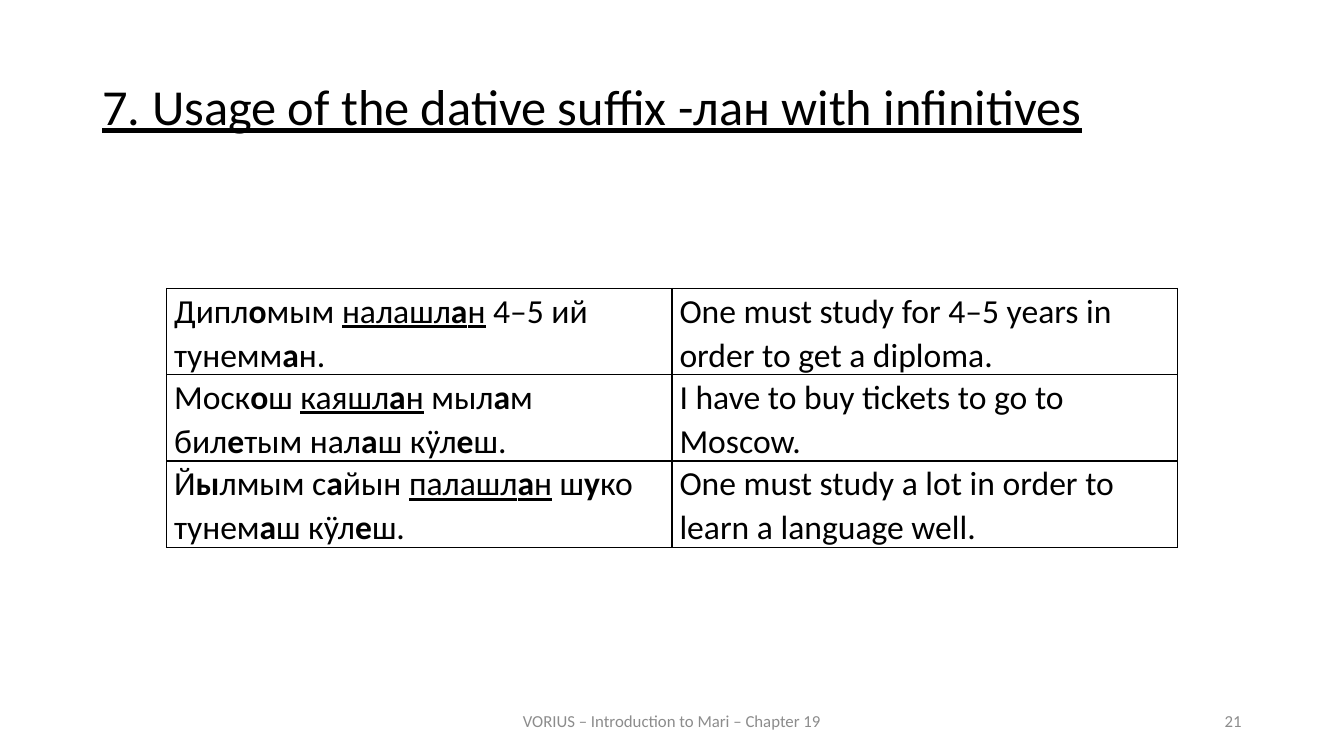
from lxml.etree import SubElement
from pptx import Presentation
from pptx.dml.color import RGBColor
from pptx.enum.text import MSO_ANCHOR, MSO_AUTO_SIZE, PP_ALIGN
from pptx.oxml.ns import qn
from pptx.util import Pt

# *bold* and _underlined_
ROWS = [
    ("Дипл*о*мым _налашл*а*н_ 4–5 ий тунемм*а*н.",
     "One must study for 4–5 years in order to get a diploma."),
    ("Моск*о*ш _каяшл*а*н_ мыл*а*м бил*е*тым нал*а*ш кӱл*е*ш.",
     "I have to buy tickets to go to Moscow."),
    ("Й*ы*лмым с*а*йын _палашл*а*н_ ш*у*ко тунем*а*ш кӱл*е*ш.",
     "One must study a lot in order to learn a language well."),
]


def color(code):
    return RGBColor.from_string(code)


class Deck:
    face, ink, gray = "Calibri", "000000", "8C8C8C"

    def __init__(self):
        self.prs = Presentation()
        self.prs.slide_width, self.prs.slide_height = Pt(960), Pt(540)
        self.slide = self.prs.slides.add_slide(self.prs.slide_layouts[5])

    def style(self, para, size, code, align=PP_ALIGN.LEFT):
        font = para.font
        font.name, font.size = self.face, Pt(size)
        font.color.rgb = color(code)
        para.alignment = align

    def title(self, text, left, top, width, height):
        box = self.slide.shapes.title
        box.left, box.top = Pt(left), Pt(top)
        box.width, box.height = Pt(width), Pt(height)
        frame = box.text_frame
        frame.text = text
        frame.auto_size = MSO_AUTO_SIZE.NONE
        frame.vertical_anchor = MSO_ANCHOR.TOP
        para = frame.paragraphs[0]
        self.style(para, 36, self.ink, PP_ALIGN.JUSTIFY)
        para.font.underline = True
        para.line_spacing = 0.9

    def note(self, text, left, width, align):
        """Add a line of footer text."""
        box = self.slide.shapes.add_textbox(Pt(left), Pt(500.5), Pt(width), Pt(28.8))
        frame = box.text_frame
        frame.word_wrap = True
        frame.vertical_anchor = MSO_ANCHOR.MIDDLE
        frame.text = text
        self.style(frame.paragraphs[0], 12, self.gray, align)

    def edge(self, cell):
        """Draw a thin line on all four sides of a cell."""
        props = cell._tc.get_or_add_tcPr()
        for side in ("lnL", "lnR", "lnT", "lnB"):
            line = SubElement(props, qn("a:" + side), w=str(Pt(1)))
            fill = SubElement(line, qn("a:solidFill"))
            SubElement(fill, qn("a:srgbClr"), val=self.ink)

    def cell(self, cell, text):
        self.edge(cell)
        cell.fill.background()
        cell.vertical_anchor = MSO_ANCHOR.MIDDLE
        cell.margin_left = cell.margin_right = Pt(5.4)
        cell.margin_top = cell.margin_bottom = 0
        para = cell.text_frame.paragraphs[0]
        self.style(para, 24, self.ink)
        para.line_spacing = 1.07
        for i, part in enumerate(text.split("_")):
            for j, piece in enumerate(part.split("*")):
                if piece:
                    run = para.add_run()
                    run.text = piece
                    run.font.underline = i % 2 == 1
                    run.font.bold = j % 2 == 1

    def table(self, rows, left, top, width, height):
        grid = self.slide.shapes.add_table(
            len(rows), len(rows[0]), Pt(left), Pt(top), Pt(width), Pt(height)).table
        grid.first_row = grid.horz_banding = False
        for r, row in enumerate(rows):
            for c, text in enumerate(row):
                self.cell(grid.cell(r, c), text)


def main():
    deck = Deck()
    deck.title("7. Usage of the dative suffix -лан with infinitives", 66, 54.7, 828, 60)
    deck.note("VORIUS – Introduction to Mari – Chapter 19", 318, 324, PP_ALIGN.CENTER)
    deck.note("21", 678, 216, PP_ALIGN.RIGHT)
    deck.table(ROWS, 119, 206, 722, 180.6)
    deck.prs.save("out.pptx")


if __name__ == "__main__":
    main()
